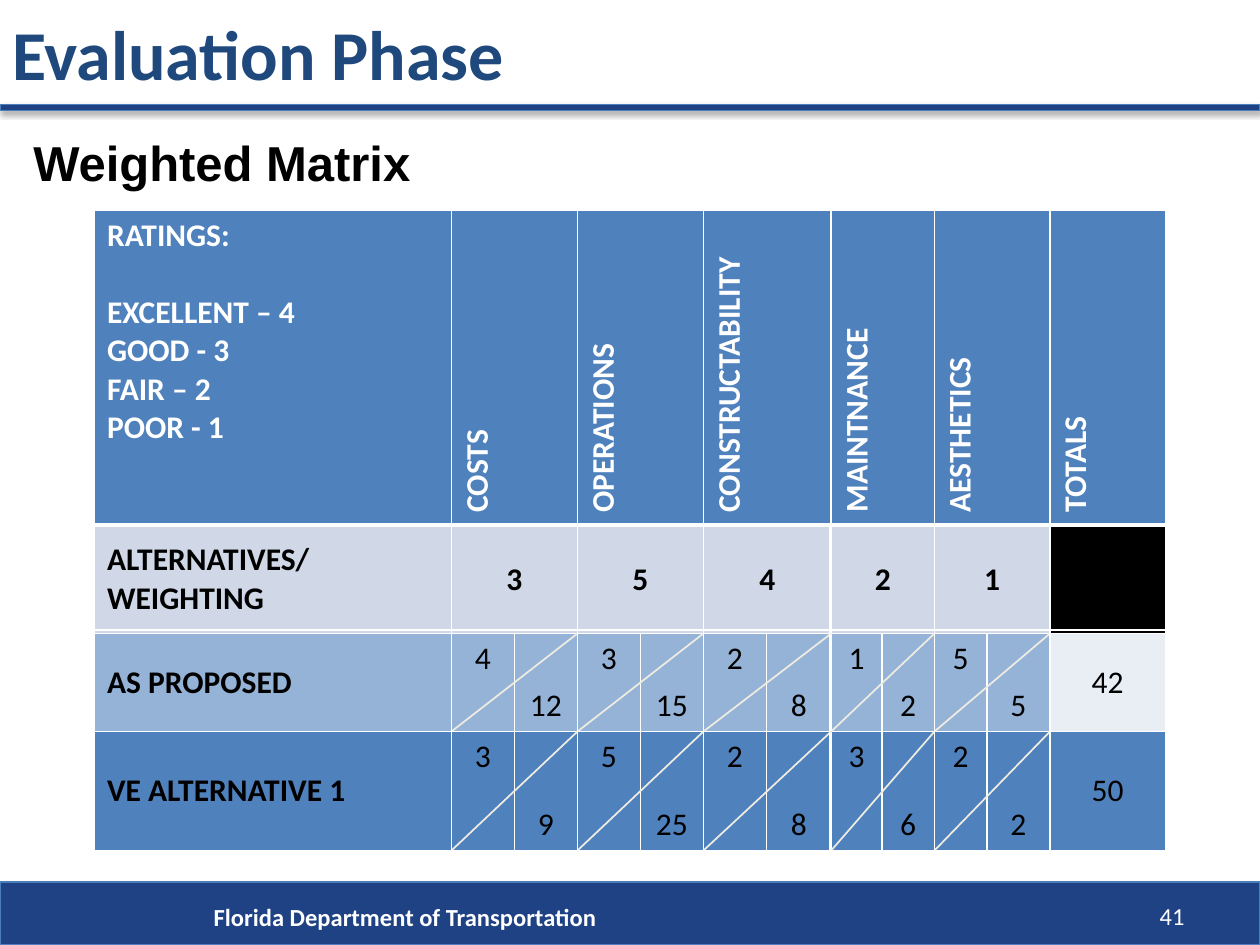
from itertools import accumulate
from lxml import etree
from pptx import Presentation
from pptx.dml.color import RGBColor
from pptx.enum import shapes, text
from pptx.oxml import ns
from pptx.util import Pt

WHITE = RGBColor(0xFF, 0xFF, 0xFF)
BLACK = RGBColor(0, 0, 0)
NAVY = RGBColor(0x1F, 0x42, 0x84)
BAR_EDGE = RGBColor(0x4B, 0x7E, 0xBC)
TITLE = RGBColor(0x1F, 0x49, 0x7D)
BLUE = RGBColor(0x4F, 0x81, 0xBD)
MID_BLUE = RGBColor(0x95, 0xB3, 0xD7)
PALE_BLUE = RGBColor(0xD0, 0xD8, 0xE8)
PALEST = RGBColor(0xE9, 0xED, 0xF4)
CREAM = RGBColor(0xEE, 0xEC, 0xE1)
LEFT, CENTER, RIGHT = text.PP_ALIGN.LEFT, text.PP_ALIGN.CENTER, text.PP_ALIGN.RIGHT
TOP, MIDDLE, BOTTOM = text.MSO_ANCHOR.TOP, text.MSO_ANCHOR.MIDDLE, text.MSO_ANCHOR.BOTTOM


def write(tf, words, size, color, bold=True, align=LEFT, font="Calibri"):
    tf.text = words
    for p in tf.paragraphs:
        p.alignment = align
        for r in p.runs:
            r.font.name, r.font.size, r.font.bold = font, Pt(size), bold
            r.font.color.rgb = color


def add_line(x1, y1, x2, y2, color):
    ln = s.shapes.add_connector(shapes.MSO_CONNECTOR.STRAIGHT, Pt(x1), Pt(y1), Pt(x2), Pt(y2))
    ln.line.color.rgb = color
    ln.line.width = Pt(1)
    etree.SubElement(ln._element.spPr, ns.qn("a:effectLst"))


prs = Presentation()
prs.slide_width, prs.slide_height = Pt(720), Pt(540)
s = prs.slides.add_slide(prs.slide_layouts[6])

# Footer band and title rule, with soft shadows
for y, h in ((504, 36), (59.75, 3.6)):
    sp = s.shapes.add_shape(shapes.MSO_SHAPE.RECTANGLE, 0, Pt(y), Pt(720), Pt(h))
    sp.fill.solid()
    sp.fill.fore_color.rgb = NAVY
    sp.line.color.rgb = BAR_EDGE
    sp.line.width = Pt(0.75)
    sp.shadow.inherit = False
    effects = sp._element.spPr.find(ns.qn("a:effectLst"))
    shadow = etree.SubElement(effects, ns.qn("a:outerShdw"), blurRad=str(Pt(3.1)),
                              dist=str(Pt(1.8)), dir="5400000", rotWithShape="0")
    black = etree.SubElement(shadow, ns.qn("a:srgbClr"), val="000000")
    etree.SubElement(black, ns.qn("a:alpha"), val="35000")

# Title, subtitle, footer and slide number
for box, words, size, color, bold, align, font, anchor in (
    ((0, 0, 695, 60), "Evaluation Phase", 40, TITLE, True, LEFT, "Calibri", MIDDLE),
    ((12, 72, 390, 41), "Weighted Matrix", 28, BLACK, True, LEFT, "Arial", TOP),
    ((115, 512, 575, 24), "Florida Department of Transportation", 14, WHITE, True, LEFT,
     "Calibri", TOP),
    ((516, 510.5, 168, 26), "41", 14, WHITE, False, RIGHT, "Calibri", MIDDLE),
):
    tf = s.shapes.add_textbox(*map(Pt, box)).text_frame
    tf.word_wrap = True
    tf.vertical_anchor = anchor
    write(tf, words, size, color, bold, align, font)

# Table grid
COLS = [204, 36, 36, 36, 36, 36, 37, 29, 30, 30, 36, 66]
ROWS = [180, 62, 56, 68]
xs = list(accumulate(COLS, initial=54))
ys = list(accumulate(ROWS, initial=120))
table = s.shapes.add_table(len(ROWS), len(COLS), Pt(xs[0]), Pt(ys[0]),
                           Pt(sum(COLS)), Pt(sum(ROWS))).table
table.first_row = table.horz_banding = False
for col, w in zip(table.columns, COLS):
    col.width = Pt(w)
for row, h in zip(table.rows, ROWS):
    row.height = Pt(h)

# Borders and fills
for i, fill in enumerate((BLUE, PALE_BLUE, MID_BLUE, BLUE)):
    for cell in table.rows[i].cells:
        tcPr = cell._tc.get_or_add_tcPr()
        for side in "LRTB":
            heavy = (i, side) in ((0, "B"), (1, "T"))
            ln = etree.SubElement(tcPr, ns.qn("a:ln" + side), w=str(Pt(3 if heavy else 1)))
            solid = etree.SubElement(ln, ns.qn("a:solidFill"))
            etree.SubElement(solid, ns.qn("a:srgbClr"), val=str(WHITE))
        cell.fill.solid()
        cell.fill.fore_color.rgb = fill
table.cell(1, 11).fill.fore_color.rgb = BLACK
table.cell(2, 11).fill.fore_color.rgb = PALEST

# Row labels
labels = ["RATINGS:\nEXCELLENT – 4\nGOOD - 3\nFAIR – 2\nPOOR - 1",
          "ALTERNATIVES/\nWEIGHTING", "AS PROPOSED", "VE ALTERNATIVE 1"]
for i, label in enumerate(labels):
    cell = table.cell(i, 0)
    write(cell.text_frame, label, 18, BLACK if i else WHITE)
    cell.vertical_anchor = MIDDLE if i else TOP
table.cell(0, 0).text_frame.paragraphs[1].space_before = Pt(22)

# Criteria headings and weights
criteria = [("COSTS", "3"), ("OPERATIONS", "5"), ("CONSTRUCTABILITY", "4"),
            ("MAINTNANCE", "2"), ("AESTHETICS", "1"), ("TOTALS", None)]
for c, (name, weight) in zip(range(1, 12, 2), criteria):
    head = table.cell(0, c)
    if weight:
        head.merge(table.cell(0, c + 1))
        cell = table.cell(1, c)
        cell.merge(table.cell(1, c + 1))
        cell.vertical_anchor = MIDDLE
        write(cell.text_frame, weight, 18, BLACK, align=CENTER)
    head._tc.get_or_add_tcPr().set("vert", "vert270")
    head.vertical_anchor = MIDDLE
    write(head.text_frame, name, 18, WHITE)

# Ratings (top), weighted scores (bottom) and totals
scores = {2: "4 12 3 15 2 8 1 2 5 5 42", 3: "3 9 5 25 2 8 3 6 2 2 50"}
for i, row in scores.items():
    for c, score in enumerate(row.split(), 1):
        cell = table.cell(i, c)
        cell.vertical_anchor = MIDDLE if c == 11 else TOP if c % 2 else BOTTOM
        write(cell.text_frame, score, 18, BLACK, False, CENTER)

# Diagonals splitting each rating from its score
for i in scores:
    for c in range(1, 11, 2):
        add_line(xs[c + 2], ys[i], xs[c], ys[i + 1], CREAM)

# Ruling over the table
for x in (258, 330, 402, 474, 534, 600):
    add_line(x, 360 if x == 600 else 300, x, 420, WHITE)
    add_line(x, 420, x, 486, WHITE)
for y in (300, 360, 486):
    add_line(48, y, 666, y, WHITE)

prs.save("out.pptx")
